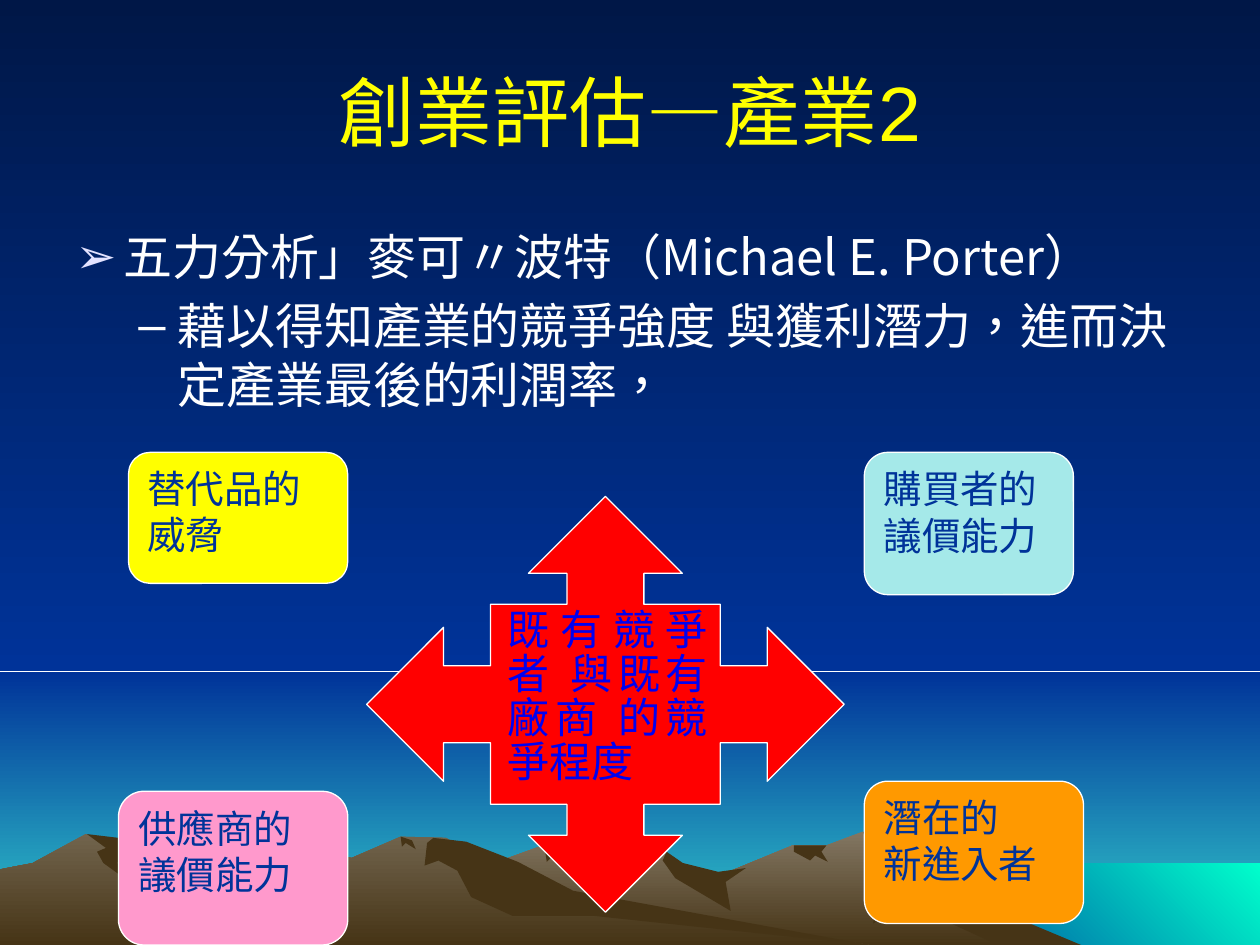
import pptx
import pptx.dml.color
import pptx.enum.shapes
import pptx.enum.text
import pptx.oxml
import pptx.oxml.ns
import pptx.util

Inches, Pt = pptx.util.Inches, pptx.util.Pt
RGB = pptx.dml.color.RGBColor.from_string
SHAPE = pptx.enum.shapes.MSO_SHAPE
ANCHOR = pptx.enum.text.MSO_ANCHOR
ALIGN = pptx.enum.text.PP_ALIGN
qn, nsdecls = pptx.oxml.ns.qn, pptx.oxml.ns.nsdecls

WIDTH, HEIGHT = 10, 7.5
SKYLINE = 5.33  # where the sky meets the horizon glow
SHORE = (6.83, 6.85)  # top left corner of the water
DOWN, TO_TOP_RIGHT = 270, 45  # gradient directions

CJK_FONT = "Noto Sans CJK SC"
THEME = {
    "title": {"size": Pt(44), "name": "Arial", "color": "FFFF00"},
    "body": {"size": Pt(28), "name": CJK_FONT, "color": "FFFFFF"},
    "rivalry": {"size": Pt(24), "name": CJK_FONT, "color": "0000F1"},
    "force": {"size": Pt(22), "name": CJK_FONT, "color": "003399"},
    "bullet": "E3E3FF",
    "dash": "FFFFFF",
    "outline": "FFFFFF",
    "rivalry_fill": ["FF0000"],
    "buyers": ["A5E9E9"],
    "substitutes": ["FFFF00"],
    "suppliers": ["FF99CC"],
    "entrants": ["FF9900"],
    "horizon": ["003399", "33CCCC"],
    "sky": ["001747", "003399"],
    "water": ["003399", "00FFCC"],
    "near_hill": ["847864", "463416"],
    "far_hill": ["73664F", "463416"],
    "shade": ["463416"],
}

# A ridge runs from left to right in inches; the hill below it reaches the slide's foot.
near_ridge = [(2.58, 7.5), (3.27, 7.09), (3.95, 6.84), (4.5, 6.64), (4.71, 6.58),
              (4.86, 6.73), (5.09, 6.69), (5.26, 6.73), (5.36, 6.9), (5.66, 6.97),
              (6.29, 6.71), (6.56, 6.71), (6.85, 6.6), (7.02, 6.71), (7.23, 6.98),
              (7.64, 7.23), (8.21, 7.5)]
far_ridge = [(0, 6.9), (0.26, 6.85), (0.68, 6.62), (0.94, 6.71), (1.23, 6.69),
             (1.6, 6.71), (1.95, 6.58), (2.15, 6.59), (2.36, 6.81), (2.6, 6.76),
             (2.79, 6.81), (3.18, 6.64), (3.54, 6.65), (4.32, 7.12), (6.9, 7.5)]

# Each shaded face is a closed outline that starts at its peak.
near_faces = {
    "right slope": [(6.85, 6.6), (7.07, 6.71), (7.34, 7.03), (7.71, 7.24), (7.96, 7.24),
                    (8.58, 7.5), (7.92, 7.5), (7.2, 7.17), (6.93, 7.33), (6.98, 7.02)],
    "summit": [(4.71, 6.58), (4.97, 6.71), (4.87, 6.83), (4.74, 7.04), (4.65, 7.27),
               (4.73, 6.9), (4.68, 6.71)],
    "saddle": [(5.29, 6.76), (5.42, 6.85), (5.7, 6.92), (5.92, 6.89), (5.76, 7),
               (5.8, 7.23), (5.36, 6.97), (5.26, 6.83)],
    "notch": [(6.3, 6.71), (6.56, 6.71), (6.52, 6.76), (6.57, 6.84), (6.47, 6.79),
              (6.43, 6.83), (6.3, 6.76)],
    "crack": [(4.32, 6.71), (4.39, 6.7), (4.39, 6.79), (4.34, 6.84)],
}
far_faces = {
    "right slope": [(3.44, 6.65), (3.7, 6.68), (4.11, 6.84), (4.55, 7.07), (6.9, 7.5),
                    (4.72, 7.27), (4.07, 7.27), (3.74, 7.12), (3.63, 6.91),
                    (3.48, 6.83), (3.37, 6.87), (3.39, 6.69)],
    "crack": [(3.18, 6.64), (3.27, 6.67), (3.3, 6.74), (3.22, 6.69), (3.19, 6.72)],
    "left peak": [(0.69, 6.62), (0.94, 6.65), (1.11, 6.69), (0.93, 6.85), (0.98, 6.89),
                  (1, 6.98), (0.82, 6.85), (0.77, 6.76), (0.84, 6.73)],
}


def paint(shape, colors, angle=DOWN):
    """Fill with one colour or a two-colour gradient; no outline, no shadow."""
    shape.shadow.inherit = False
    shape.line.fill.background()
    if len(colors) == 1:
        shape.fill.solid()
        shape.fill.fore_color.rgb = RGB(colors[0])
        return
    shape.fill.gradient()
    shape.fill.gradient_angle = angle
    for stop, color in zip(shape.fill.gradient_stops, colors):
        stop.color.rgb = RGB(color)


def write_paragraph(paragraph, text, style, **layout):
    for name, value in layout.items():
        setattr(paragraph, name, value)
    run = paragraph.add_run()
    run.text = text
    for name, value in THEME[style].items():
        if name == "color":
            run.font.color.rgb = RGB(value)
        else:
            setattr(run.font, name, value)
    properties = run.font._element
    properties.set("lang", "zh-TW")
    properties.find(qn("a:latin")).addnext(pptx.oxml.parse_xml(
        f'<a:ea {nsdecls("a")} typeface="{CJK_FONT}"/>'))


presentation = pptx.Presentation()
presentation.slide_width, presentation.slide_height = Inches(WIDTH), Inches(HEIGHT)
slide = presentation.slides.add_slide(presentation.slide_layouts[5])

# Backdrop: colour bands given by their top left and bottom right corners
for band, angle, (left, top), (right, bottom) in [
    ("horizon", DOWN, (0, SKYLINE), (WIDTH, HEIGHT)),
    ("sky", DOWN, (0, 0), (WIDTH, SKYLINE)),
    ("water", TO_TOP_RIGHT, SHORE, (WIDTH, HEIGHT)),
]:
    box = map(Inches, (left, top, right - left, bottom - top))
    paint(slide.shapes.add_shape(SHAPE.RECTANGLE, *box), THEME[band], angle)

# Hills: the body under the ridge first, then its shaded faces
for hill, ridge, faces in [("near_hill", near_ridge, near_faces),
                           ("far_hill", far_ridge, far_faces)]:
    foot = [(ridge[-1][0], HEIGHT), (ridge[0][0], HEIGHT)]
    outlines = [(hill, ridge + foot)] + [("shade", face) for face in faces.values()]
    for colors, outline in outlines:
        start, *others = [(Inches(x), Inches(y)) for x, y in outline]
        builder = slide.shapes.build_freeform(*start)
        builder.add_line_segments(others, close=True)
        paint(builder.convert_to_shape(), THEME[colors])

title = slide.shapes.title
slide.shapes._spTree.append(title._element)  # bring in front of the scenery
title.left, title.top, title.width, title.height = map(Inches, (0.5, 0.25, 9, 1.25))
title.text_frame.vertical_anchor = ANCHOR.MIDDLE
write_paragraph(title.text_frame.paragraphs[0], "創業評估—產業2", "title",
                alignment=ALIGN.CENTER)

# Body: one paragraph per outline level
body = slide.shapes.add_textbox(*map(Inches, (0.5, 1.75, 9, 4.92))).text_frame
body.word_wrap = True
for level, (text, bullet, color, margin, indent) in enumerate([
    ("五力分析」麥可〃波特（Michael E. Porter）", "➢", "bullet", 0.38, -0.38),
    ("藉以得知產業的競爭強度 與獲利潛力，進而決定產業最後的利潤率，", "–", "dash",
     0.81, -0.31),
]):
    paragraph = body.add_paragraph() if level else body.paragraphs[0]
    write_paragraph(paragraph, text, "body", level=level, space_before=Pt(5.6))
    properties = paragraph._p.get_or_add_pPr()
    properties.set("marL", str(Inches(margin)))
    properties.set("indent", str(Inches(indent)))
    for element in (
        f'<a:buClr {nsdecls("a")}><a:srgbClr val="{THEME[color]}"/></a:buClr>',
        f'<a:buFont {nsdecls("a")} typeface="Arial"/>',
        f'<a:buChar {nsdecls("a")} char="{bullet}"/>',
    ):
        properties.append(pptx.oxml.parse_xml(element))

# Five forces: rivalry in the middle, the other four around it
ARROWS, CARD = SHAPE.QUAD_ARROW_CALLOUT, SHAPE.ROUNDED_RECTANGLE
justified = {"alignment": ALIGN.JUSTIFY, "line_spacing": Pt(25)}
plain = {"alignment": ALIGN.LEFT}
for kind, fill, style, layout, box, lines in [
    (ARROWS, "rivalry_fill", "rivalry", justified, (2.91, 3.94, 3.79, 3.3),
     ["既有競爭者 與既有廠商 的競爭程度 "]),
    (CARD, "buyers", "force", plain, (6.86, 3.59, 1.66, 1.13), ["購買者的議價能力"]),
    (CARD, "substitutes", "force", plain, (1.02, 3.59, 1.74, 1.04), ["替代品的威脅"]),
    (CARD, "suppliers", "force", plain, (0.94, 6.28, 1.82, 1.22), ["供應商的", "議價能力"]),
    (CARD, "entrants", "force", plain, (6.86, 6.2, 1.74, 1.13), ["潛在的", "新進入者"]),
]:
    force = slide.shapes.add_shape(kind, *map(Inches, box))
    paint(force, THEME[fill])
    force.line.color.rgb = RGB(THEME["outline"])
    force.line.width = Pt(0.75)
    frame = force.text_frame
    frame.word_wrap = True
    frame.vertical_anchor = ANCHOR.TOP
    for number, line in enumerate(lines):
        paragraph = frame.add_paragraph() if number else frame.paragraphs[0]
        write_paragraph(paragraph, line, style, **layout)
        if kind == ARROWS:
            paragraph._p.get_or_add_pPr().set("marL", str(Inches(0.04)))

presentation.save("out.pptx")
